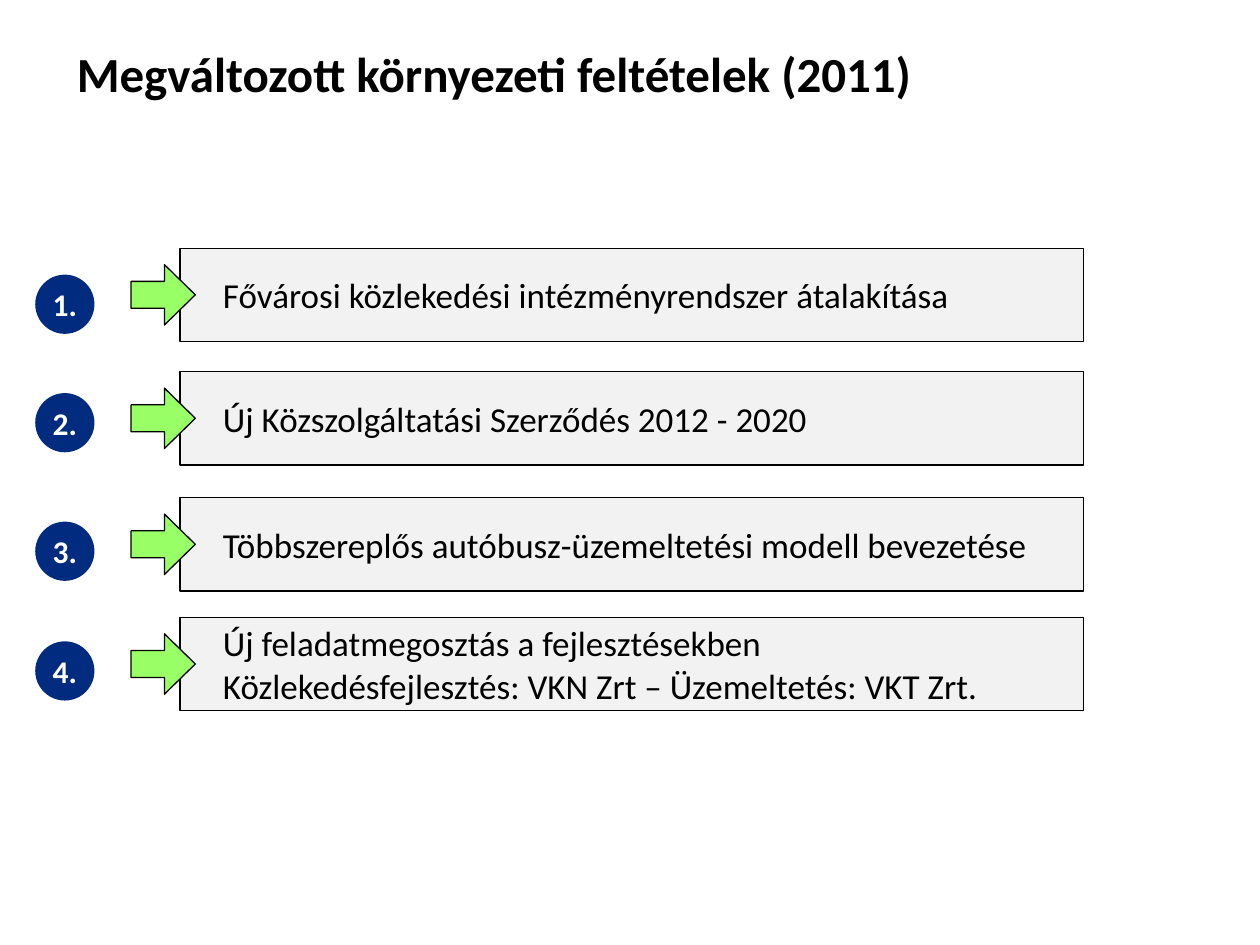
from pptx import Presentation
from pptx.dml.color import RGBColor
from pptx.enum.shapes import MSO_SHAPE
from pptx.enum.text import MSO_ANCHOR, PP_ALIGN
from pptx.util import Inches, Pt

RECT, ARROW, DISC = MSO_SHAPE.RECTANGLE, MSO_SHAPE.RIGHT_ARROW, MSO_SHAPE.OVAL
MID, LEFT, MITTE = MSO_ANCHOR.MIDDLE, PP_ALIGN.LEFT, PP_ALIGN.CENTER
WIDE, HIGH = 10, 7.5
COLS, ROWS = 100, 75
TITLE = "Megváltozott környezeti feltételek (2011)"
ITEMS = [
    (19.7, 21.8, "Fővárosi közlekedési intézményrendszer átalakítása"),
    (29.5, 31.2, "Új Közszolgáltatási Szerződés 2012 - 2020"),
    (39.5, 41.4, "Többszereplős autóbusz-üzemeltetési modell bevezetése"),
    (49.0, 50.9, "Új feladatmegosztás a fejlesztésekben\v"
                 "Közlekedésfejlesztés: VKN Zrt – Üzemeltetés: VKT Zrt."),
]


def color(code):
    """Turn a hex string into a colour."""
    return RGBColor.from_string(code)


def grid(col, row, wide, high):
    """Turn columns and rows into slide lengths."""
    x, y = WIDE / COLS, HIGH / ROWS
    return [Inches(n) for n in (col * x, row * y, wide * x, high * y)]


def write(shape, text, size, tint="000000", bold=False, align=LEFT, pad=(0, 0)):
    """Fill a shape with formatted text, centred in height."""
    frame = shape.text_frame
    side, edge = (Inches(n) for n in pad)
    form = dict(word_wrap=True, vertical_anchor=MID, margin_left=side,
                margin_right=side, margin_top=edge, margin_bottom=edge)
    for key, value in form.items():
        setattr(frame, key, value)
    frame.text = text
    para = frame.paragraphs[0]
    para.alignment = align
    for run in para.runs:
        for key, value in dict(name="Calibri", size=Pt(size), bold=bold).items():
            setattr(run.font, key, value)
        run.font.color.rgb = color(tint)


def draw(slide, kind, box, fill, line=None):
    """Add a flat preset shape."""
    shape = slide.shapes.add_shape(kind, *grid(*box))
    shape.shadow.inherit = False
    shape.fill.solid()
    shape.fill.fore_color.rgb = color(fill)
    if line:
        shape.line.color.rgb = color(line)
        shape.line.width = Pt(0.75)
    else:
        shape.line.fill.background()
    return shape


def head(slide, box):
    """Place the title in its box."""
    title = slide.shapes.title
    title.left, title.top, title.width, title.height = grid(*box)
    write(title, TITLE, 28, bold=True, pad=(0.1, 0.05))


def bar(slide, box, text):
    """Draw a bar with its text and the arrow on its left edge."""
    col, row, wide, high = box
    draw(slide, RECT, box, "F2F2F2", "000000")
    label = slide.shapes.add_textbox(*grid(col + 3.4, row, wide - 3.4, high))
    write(label, text, 20)
    arrow = draw(slide, ARROW, (col - 3.9, row + 1.3, 5.1, 4.8), "99FF66", "000000")
    arrow.adjustments[0], arrow.adjustments[1] = 0.445, 0.511


def badge(slide, box, rank):
    """Draw a numbered disc."""
    disc = draw(slide, DISC, box, "002B7F")
    write(disc, f"{rank}.", 18, "FFFFFF", True, MITTE, (0, 0.05))


def main():
    """Build and save the slide."""
    deck = Presentation()
    deck.slide_width, deck.slide_height = Inches(WIDE), Inches(HIGH)
    slide = deck.slides.add_slide(deck.slide_layouts[5])
    head(slide, (5.1, 2.9, 90, 5.7))
    for rank, (row, spot, text) in enumerate(ITEMS, 1):
        bar(slide, (14.3, row, 71.7, 7.4), text)
        badge(slide, (2.8, spot, 4.7, 4.7), rank)
    deck.save("out.pptx")


if __name__ == "__main__":
    main()
